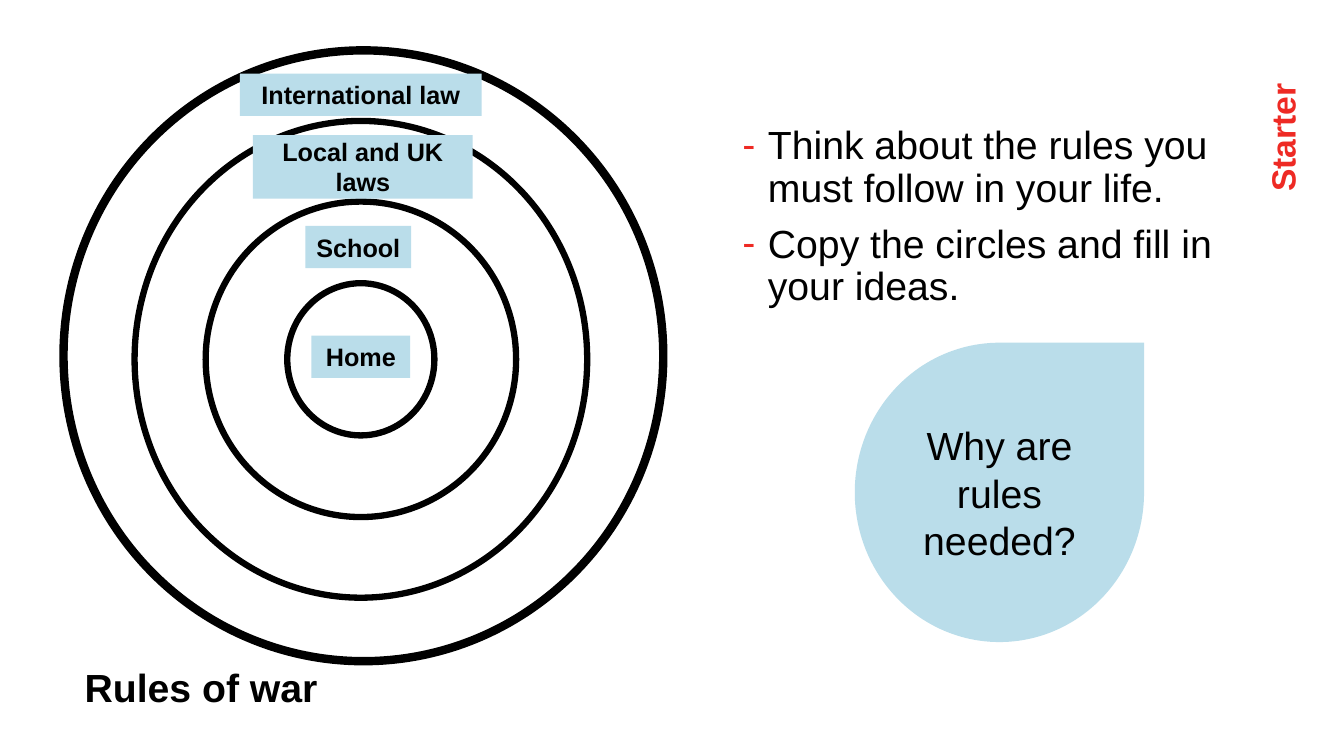
from dataclasses import dataclass

from lxml.etree import SubElement as Sub
from pptx import Presentation
from pptx.dml.color import RGBColor as Rgb
from pptx.enum.shapes import MSO_SHAPE as Kind
from pptx.enum.text import MSO_ANCHOR as Anchor, MSO_AUTO_SIZE as Fit, PP_ALIGN as Align
from pptx.oxml.ns import qn
from pptx.shapes.autoshape import Shape
from pptx.slide import Slide
from pptx.text.text import TextFrame
from pptx.util import Inches, Pt

CELL = Inches(0.1)  # one column or row of the grid
WIDE, HIGH = 133.33, 75


@dataclass(frozen=True)
class Theme:
    font: str = "Arial"
    ink: str = "000000"
    red: str = "EE2A24"
    pale: str = "BADDEA"
    large: int = 28
    mid: int = 24
    small: int = 18


@dataclass(frozen=True)
class Box:
    left: float
    top: float
    wide: float
    high: float


@dataclass(frozen=True)
class Ring:
    x: float
    y: float
    wide: float
    high: float
    line: float = 4.5


@dataclass(frozen=True)
class Label:
    text: str
    x: float
    y: float
    wide: float
    high: float = 4.2


THEME = Theme()
HEAD = Box(7.4, 65.3, 43.5, 5.7)
TASK = Box(72.7, 12, 49.4, 55.6)
SIDE = Box(115.2, 5.5, 24, 5)
DROP = Box(84.8, 34, 28.7, 29.7)
RINGS = (
    Ring(36.05, 35.3, 59.5, 60.6, 6),
    Ring(35.8, 35.65, 44.9, 47.3),
    Ring(35.8, 35.65, 30.8, 31.3),
    Ring(35.8, 35.65, 14.6, 15.1),
)
LABELS = (
    Label("Home", 35.8, 35.4, 9.8),
    Label("School", 35.55, 24.5, 10.5),
    Label("Local and UK laws", 36, 16.55, 21.8, 6.3),
    Label("International law", 35.8, 9.4, 24),
)
TASKS = (
    "Think about the rules you must follow in your life.",
    "Copy the circles and fill in your ideas.",
)


def span(box: Box) -> tuple[int, ...]:
    """Turn grid lengths into slide lengths."""
    return tuple(round(n * CELL) for n in (box.left, box.top, box.wide, box.high))


def around(item: Ring | Label) -> Box:
    """Give the box centred on the item's x and y."""
    return Box(item.x - item.wide / 2, item.y - item.high / 2, item.wide, item.high)


def write(frame: TextFrame, lines: tuple[str, ...], size: int, bold: bool = False,
          tint: str = THEME.ink, align: Align = Align.LEFT, dash: bool = False) -> None:
    frame.word_wrap = True
    frame.auto_size = Fit.NONE
    looks = {"name": THEME.font, "size": Pt(size), "bold": bold}
    for i, line in enumerate(lines):
        para = frame.add_paragraph() if i else frame.paragraphs[0]
        run = para.add_run()
        run.text = line
        para.alignment = align
        if dash:
            add_dash(para)
            para.line_spacing = 0.9
            para.space_before = Pt(10 if i else 0)
        for key, value in looks.items():
            setattr(run.font, key, value)
        run.font.color.rgb = Rgb.from_string(tint)


def add_dash(para) -> None:
    props = para._p.get_or_add_pPr()
    props.set("marL", str(Inches(0.25)))
    props.set("indent", str(-Inches(0.25)))
    Sub(Sub(props, qn("a:buClr")), qn("a:srgbClr"), val=THEME.red)
    Sub(props, qn("a:buFont"), typeface=THEME.font)
    Sub(props, qn("a:buChar"), char="⁃")


def add_shape(slide: Slide, kind: Kind, box: Box) -> Shape:
    shape = slide.shapes.add_shape(kind, *span(box))
    shape.shadow.inherit = False
    return shape


def add_ring(slide: Slide, ring: Ring) -> None:
    shape = add_shape(slide, Kind.OVAL, around(ring))
    shape.fill.background()
    shape.line.color.rgb = Rgb.from_string(THEME.ink)
    shape.line.width = Pt(ring.line)


def add_panel(slide: Slide, kind: Kind, box: Box, text: str, size: int, bold: bool) -> None:
    shape = add_shape(slide, kind, box)
    shape.fill.solid()
    shape.fill.fore_color.rgb = Rgb.from_string(THEME.pale)
    shape.line.fill.background()
    shape.text_frame.vertical_anchor = Anchor.MIDDLE
    write(shape.text_frame, (text,), size, bold, align=Align.CENTER)


def main() -> None:
    deck = Presentation()
    deck.slide_width, deck.slide_height = round(WIDE * CELL), HIGH * CELL
    slide = deck.slides.add_slide(deck.slide_layouts[5])

    title = slide.shapes.title
    for key, value in zip(("left", "top", "width", "height"), span(HEAD)):
        setattr(title, key, value)
    title.text_frame.vertical_anchor = Anchor.TOP
    write(title.text_frame, ("Rules of war",), THEME.large, bold=True)

    tasks = slide.shapes.add_textbox(*span(TASK))
    write(tasks.text_frame, TASKS, THEME.large, dash=True)

    for ring in RINGS:
        add_ring(slide, ring)
    for label in LABELS:
        add_panel(slide, Kind.RECTANGLE, around(label), label.text, THEME.small, True)

    side = slide.shapes.add_textbox(*span(SIDE))
    side.rotation = 270
    write(side.text_frame, ("Starter",), THEME.mid, bold=True, tint=THEME.red)

    add_panel(slide, Kind.TEAR, DROP, "Why are rules needed?", THEME.large, False)
    deck.save("out.pptx")


if __name__ == "__main__":
    main()
